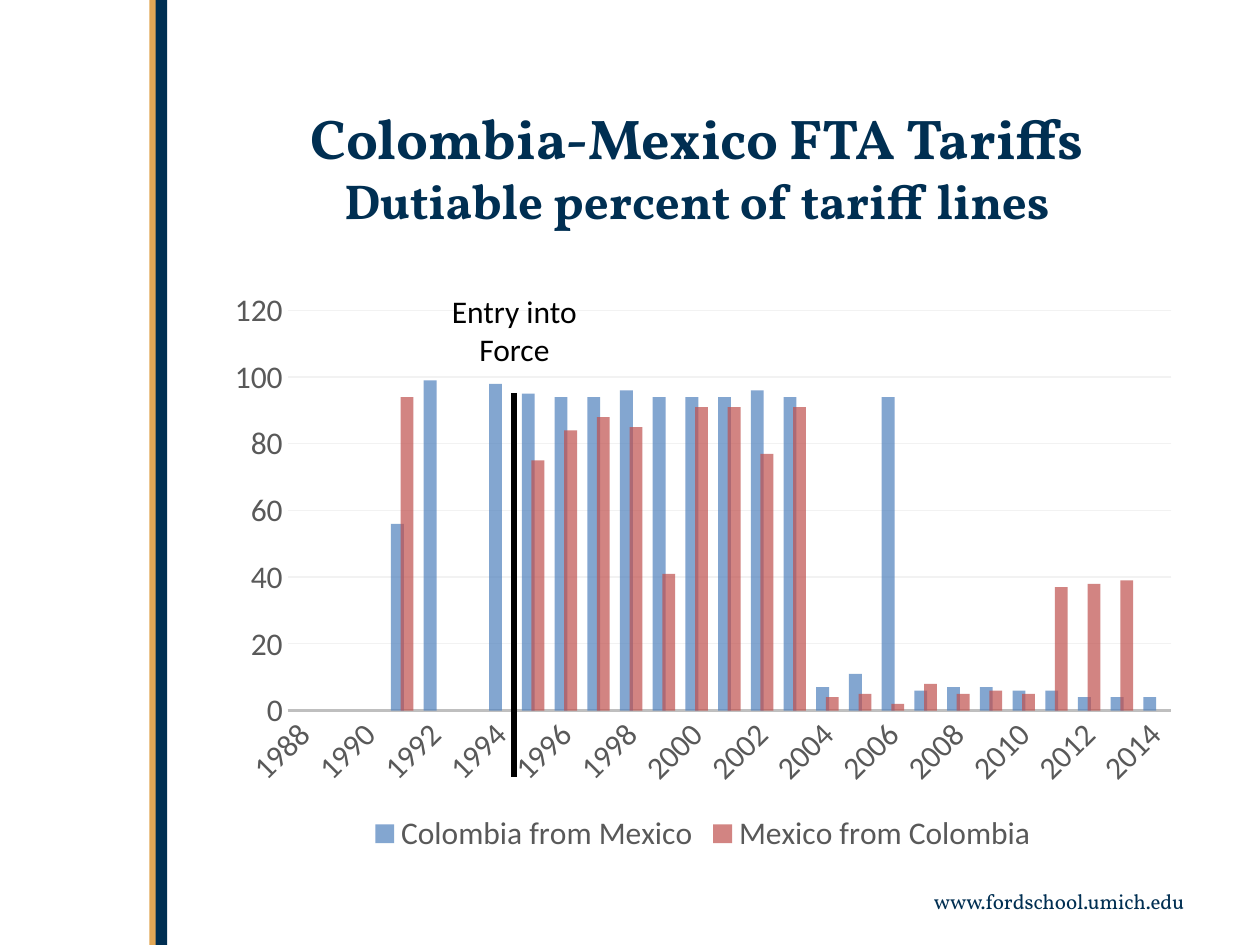
"""Build a slide charting dutiable tariff lines under the Colombia-Mexico FTA."""
from dataclasses import dataclass

import lxml.etree
import pptx
import pptx.chart.data
import pptx.dml.color
import pptx.enum.chart
import pptx.enum.shapes
import pptx.enum.text
import pptx.oxml.ns
import pptx.util

Cm = pptx.util.Cm
Pt = pptx.util.Pt
qn = pptx.oxml.ns.qn
Align = pptx.enum.text.PP_ALIGN
Anchor = pptx.enum.text.MSO_ANCHOR


@dataclass(frozen=True)
class Theme:
    navy: str = "002F52"
    gold: str = "E3A856"
    black: str = "000000"
    label: str = "595959"
    axis: str = "BFBFBF"
    grid: str = "F2F2F2"
    blue: str = "4F81BD"
    red: str = "C0504D"
    heading_font: str = "Vollkorn"
    body_font: str = "Calibri"
    title_size: int = 32
    subtitle_size: int = 28
    body_size: int = 18
    footer_size: int = 12


theme = Theme()


def style_font(font, name, size, color, bold=False):
    font.name = name
    font.size = Pt(size)
    font.bold = bold
    font.color.rgb = pptx.dml.color.RGBColor.from_string(color)


def add_text(box, lines, name, color, align, anchor=Anchor.TOP, bold=False):
    shape = slide.shapes.add_textbox(*map(Cm, box))
    frame = shape.text_frame
    frame.word_wrap = True
    frame.vertical_anchor = anchor
    paragraph = frame.paragraphs[0]
    paragraph.alignment = align
    for index, (text, size) in enumerate(lines):
        if index:
            paragraph.add_line_break()
        run = paragraph.add_run()
        run.text = text
        style_font(run.font, name, size, color, bold)


presentation = pptx.Presentation()
presentation.slide_width = Cm(25.4)
presentation.slide_height = Cm(19.05)
slide = presentation.slides.add_slide(presentation.slide_layouts[6])

for left, width, color in ((3.12, 0.25, theme.navy), (3.01, 0.13, theme.gold)):
    stripe = slide.shapes.add_shape(
        pptx.enum.shapes.MSO_SHAPE.RECTANGLE, Cm(left), 0, Cm(width), presentation.slide_height
    )
    stripe.shadow.inherit = False
    stripe.fill.solid()
    stripe.fill.fore_color.rgb = pptx.dml.color.RGBColor.from_string(color)
    stripe.line.fill.background()

add_text((17.78, 17.78, 6.35, 0.76), [("www.fordschool.umich.edu", theme.footer_size)],
         theme.heading_font, theme.navy, Align.RIGHT)

series_table = (
    ("Colombia from Mexico", theme.blue,
     (None, None, None, 56, 99, None, 98, 95, 94, 94, 96, 94, 94, 94,
      96, 94, 7, 11, 94, 6, 7, 7, 6, 6, 4, 4, 4)),
    ("Mexico from Colombia", theme.red,
     (None, None, None, 94, None, None, None, 75, 84, 88, 85, 41, 91, 91,
      77, 91, 4, 5, 2, 8, 5, 6, 5, 37, 38, 39, None)),
)
chart_data = pptx.chart.data.CategoryChartData(number_format="General")
chart_data.categories = [str(year) for year in range(1988, 2015)]
for name, color, values in series_table:
    chart_data.add_series(name, values)

chart = slide.shapes.add_chart(
    pptx.enum.chart.XL_CHART_TYPE.COLUMN_CLUSTERED,
    Cm(4.34), Cm(5.64), Cm(19.66), Cm(11.68), chart_data,
).chart
style_font(chart.font, theme.body_font, theme.body_size, theme.label)
chart.has_title = False
chart.has_legend = True
chart.legend.position = pptx.enum.chart.XL_LEGEND_POSITION.BOTTOM
chart.legend.include_in_layout = False
style_font(chart.legend.font, theme.body_font, theme.body_size, theme.label)

plot = chart.plots[0]
plot.gap_width = 80
plot.overlap = 25
plot.vary_by_categories = False
for series, (name, color, values) in zip(plot.series, series_table):
    series.invert_if_negative = False
    series.format.fill.solid()
    series.format.fill.fore_color.rgb = pptx.dml.color.RGBColor.from_string(color)
    color_element = next(series.format.fill._xPr.iter(qn("a:srgbClr")))
    lxml.etree.SubElement(color_element, qn("a:alpha"), val="70000")

for axis in (chart.category_axis, chart.value_axis):
    axis.major_tick_mark = pptx.enum.chart.XL_TICK_MARK.NONE
    axis.minor_tick_mark = pptx.enum.chart.XL_TICK_MARK.NONE
    style_font(axis.tick_labels.font, theme.body_font, theme.body_size, theme.label)

years = chart.category_axis
years.format.line.width = Pt(1.25)
years.format.line.color.rgb = pptx.dml.color.RGBColor.from_string(theme.axis)
years._element.find(qn("c:txPr")).find(qn("a:bodyPr")).set("rot", "-2700000")
label_skip = lxml.etree.Element(qn("c:tickLblSkip"), val="2")
years._element.find(qn("c:noMultiLvlLbl")).addprevious(label_skip)

percent = chart.value_axis
percent.minimum_scale = 0
percent.maximum_scale = 120
percent.major_unit = 20
percent.format.line.fill.background()
percent.has_major_gridlines = True
percent.major_gridlines.format.line.width = Pt(0.75)
percent.major_gridlines.format.line.color.rgb = pptx.dml.color.RGBColor.from_string(theme.grid)

entry_line = slide.shapes.add_connector(
    pptx.enum.shapes.MSO_CONNECTOR.STRAIGHT, Cm(10.36), Cm(7.92), Cm(10.36), Cm(15.67)
)
entry_line.line.width = Pt(3)
entry_line.line.color.rgb = pptx.dml.color.RGBColor.from_string(theme.black)
lxml.etree.SubElement(entry_line._element.spPr, qn("a:effectLst"))

add_text((8.2, 5.77, 4.34, 1.91), [("Entry into Force", theme.body_size)],
         theme.body_font, theme.black, Align.CENTER)
add_text((3.99, 1.8, 20.12, 3.12),
         [("Colombia-Mexico FTA Tariffs", theme.title_size),
          ("Dutiable percent of tariff lines", theme.subtitle_size)],
         theme.heading_font, theme.navy, Align.CENTER, Anchor.MIDDLE, bold=True)

presentation.save("out.pptx")
